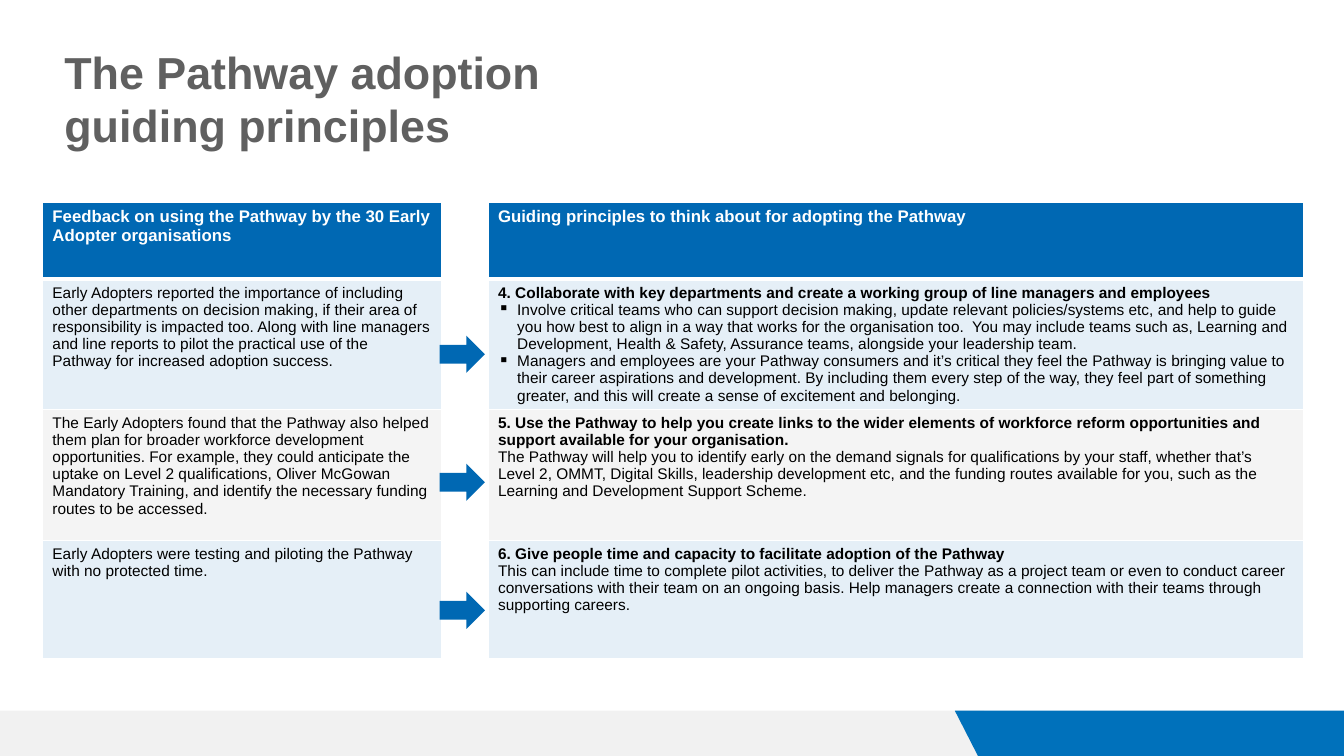
from lxml import etree
from pptx import Presentation
from pptx.dml.color import RGBColor
from pptx.enum.shapes import MSO_SHAPE
from pptx.oxml.ns import qn
from pptx.util import Inches, Pt

RIGHT_ARROW = MSO_SHAPE.RIGHT_ARROW
BLUE, FOOTER_BLUE, GREY = "0068B3", "0071BB", "CACACA"
WHITE, BLACK, TITLE_GREY = "FFFFFF", "000000", "606060"
BULLET = "▪"
COLUMN_WIDTHS = [3.96, 0.46, 8.09]
ROW_HEIGHTS = [0.76, 1.25, 1.3, 1.17]
HEADINGS = [
    "Feedback on using the Pathway by the 30 Early Adopter organisations",
    "Guiding principles to think about for adopting the Pathway",
]
PRINCIPLES = [
    (
        "Early Adopters reported the importance of including other departments on decision making, if their area of responsibility is impacted too. Along with line managers and line reports to pilot the practical use of the Pathway for increased adoption success.",
        "4. Collaborate with key departments and create a working group of line managers and employees",
        [
            "Involve critical teams who can support decision making, update relevant policies/systems etc, and help to guide you how best to align in a way that works for the organisation too.  You may include teams such as, Learning and Development, Health & Safety, Assurance teams, alongside your leadership team.",
            "Managers and employees are your Pathway consumers and it’s critical they feel the Pathway is bringing value to their career aspirations and development. By including them every step of the way, they feel part of something greater, and this will create a sense of excitement and belonging.",
        ],
    ),
    (
        "The Early Adopters found that the Pathway also helped them plan for broader workforce development opportunities. For example, they could anticipate the uptake on Level 2 qualifications, Oliver McGowan Mandatory Training, and identify the necessary funding routes to be accessed.",
        "5. Use the Pathway to help you create links to the wider elements of workforce reform opportunities and support available for your organisation.",
        [
            "The Pathway will help you to identify early on the demand signals for qualifications by your staff, whether that’s Level 2, OMMT, Digital Skills, leadership development etc, and the funding routes available for you, such as the Learning and Development Support Scheme.",
        ],
    ),
    (
        "Early Adopters were testing and piloting the Pathway with no protected time.",
        "6. Give people time and capacity to facilitate adoption of the Pathway",
        [
            "This can include time to complete pilot activities, to deliver the Pathway as a project team or even to conduct career conversations with their team on an ongoing basis. Help managers create a connection with their teams through supporting careers.",
        ],
    ),
]


def rgb(color):
    return RGBColor.from_string(color)


def paint(fill, properties, color, opacity=100):
    fill.solid()
    fill.fore_color.rgb = rgb(color)
    if opacity < 100:
        tint = properties.find(f"{qn('a:solidFill')}/{qn('a:srgbClr')}")
        etree.SubElement(tint, qn("a:alpha"), val=str(opacity * 1000))


def finish_shape(shape, color, opacity=100):
    paint(shape.fill, shape.element.spPr, color, opacity)
    shape.line.fill.background()
    shape.shadow.inherit = False


def add_footer_panel(slide, points, color, opacity=100):
    corners = [(Inches(x), Inches(y)) for x, y in points]
    outline = slide.shapes.build_freeform(*corners[0])
    outline.add_line_segments(corners[1:], close=True)
    finish_shape(outline.convert_to_shape(), color, opacity)


def add_arrow(slide, top):
    arrow = slide.shapes.add_shape(
        RIGHT_ARROW, Inches(4.36), Inches(top), Inches(0.45), Inches(0.37)
    )
    finish_shape(arrow, BLUE)


def write(frame, lines, size, color):
    for index, (text, bold, bulleted) in enumerate(lines):
        paragraph = frame.paragraphs[0] if index == 0 else frame.add_paragraph()
        paragraph.text = text
        if bulleted:
            settings = paragraph._p.get_or_add_pPr()
            settings.set("marL", str(Inches(0.19)))
            settings.set("indent", str(-Inches(0.19)))
            etree.SubElement(settings, qn("a:buChar"), char=BULLET)
        paragraph.font.name = "Arial"
        paragraph.font.size = Pt(size)
        paragraph.font.bold = bold
        paragraph.font.color.rgb = rgb(color)


def add_title(slide, lines):
    title = slide.shapes.add_textbox(
        Inches(0.54), Inches(0.39), Inches(8.58), Inches(0.77)
    )
    title.text_frame.word_wrap = True
    write(title.text_frame, [(line, True, False) for line in lines], 32, TITLE_GREY)


def set_borders(cell, top, bottom):
    properties = cell._tc.get_or_add_tcPr()
    for side, width in (("L", 1), ("R", 1), ("T", top), ("B", bottom)):
        border = etree.SubElement(properties, qn(f"a:ln{side}"), w=str(Pt(width)))
        solid = etree.SubElement(border, qn("a:solidFill"))
        etree.SubElement(solid, qn("a:srgbClr"), val=WHITE)


def fill_cell(cell, lines, size, color, background, opacity=100):
    paint(cell.fill, cell._tc.get_or_add_tcPr(), background, opacity)
    write(cell.text_frame, lines, size, color)


def add_principles_table(slide):
    table = slide.shapes.add_table(
        len(ROW_HEIGHTS), len(COLUMN_WIDTHS), Inches(0.42), Inches(2.01),
        Inches(sum(COLUMN_WIDTHS)), Inches(sum(ROW_HEIGHTS)),
    ).table
    for column, width in zip(table.columns, COLUMN_WIDTHS):
        column.width = Inches(width)
    for index, (row, height) in enumerate(zip(table.rows, ROW_HEIGHTS)):
        row.height = Inches(height)
        for cell in row.cells:
            set_borders(cell, 3 if index == 1 else 1, 3 if index == 0 else 1)
        row.cells[1].fill.background()

    for column, heading in zip((0, 2), HEADINGS):
        fill_cell(table.cell(0, column), [(heading, True, False)], 12, WHITE, BLUE)
    for row, (feedback, principle, details) in enumerate(PRINCIPLES, 1):
        band = (BLUE, 10) if row % 2 else (GREY, 20)
        bulleted = len(details) > 1
        guidance = [(principle, True, False)]
        guidance += [(detail, False, bulleted) for detail in details]
        fill_cell(table.cell(row, 0), [(feedback, False, False)], 11, BLACK, *band)
        fill_cell(table.cell(row, 2), guidance, 11, BLACK, *band)


def main():
    presentation = Presentation()
    presentation.slide_width = Inches(13.33)
    presentation.slide_height = Inches(7.5)
    slide = presentation.slides.add_slide(presentation.slide_layouts[6])

    add_footer_panel(slide, [(0, 7.05), (9.76, 7.05), (9.99, 7.5), (0, 7.5)], GREY, 25)
    add_footer_panel(
        slide, [(9.47, 7.05), (13.33, 7.05), (13.33, 7.5), (9.7, 7.5)], FOOTER_BLUE
    )
    add_principles_table(slide)
    add_title(slide, ["The Pathway adoption", "guiding principles"])
    for index in range(len(PRINCIPLES)):
        add_arrow(slide, 3.33 + 1.27 * index)

    presentation.save("out.pptx")


if __name__ == "__main__":
    main()
